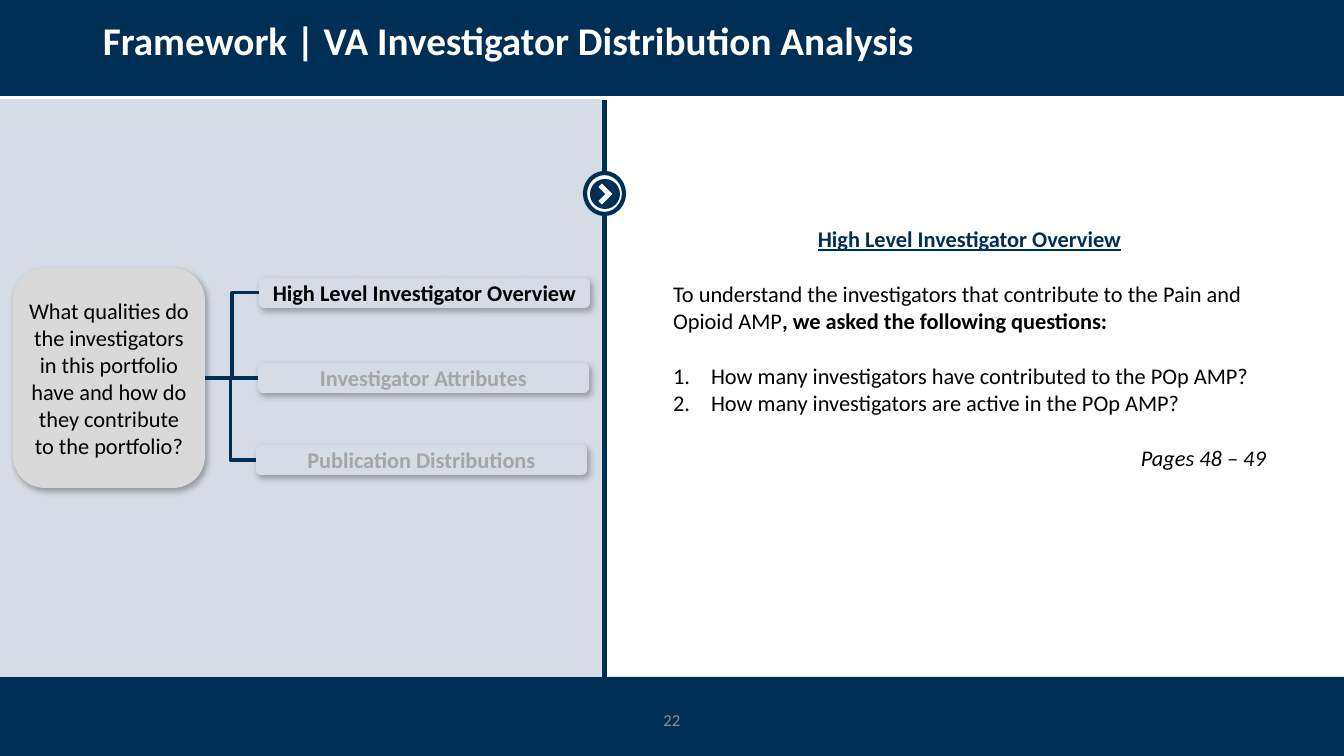
import lxml.etree
import pptx
import pptx.dml.color
import pptx.enum.shapes
import pptx.enum.text
import pptx.oxml.ns
import pptx.util

PX = 914400 / 100.8
NAVY, PALE, GREY, WHITE, BLACK = "002F56", "D6DCE5", "A5A5A5", "FFFFFF", "000000"
SHAPE = pptx.enum.shapes.MSO_SHAPE
CONNECTOR = pptx.enum.shapes.MSO_CONNECTOR
ALIGN = pptx.enum.text.PP_ALIGN
MIDDLE = pptx.enum.text.MSO_ANCHOR.MIDDLE
qn = pptx.oxml.ns.qn


def px(*lengths):
    return [round(length * PX) for length in lengths]


def color(value):
    return pptx.dml.color.RGBColor.from_string(value)


deck = pptx.Presentation()
deck.slide_width, deck.slide_height = px(1344, 756)
page = deck.slides.add_slide(deck.slide_layouts[6])
shapes = page.shapes

# Bands, left panel, divider and the badge on it
for kind, area, fill in [
    (SHAPE.RECTANGLE, (0, 677, 1344, 79), NAVY),
    (SHAPE.RECTANGLE, (0, 0, 1344, 96), NAVY),
    (SHAPE.RECTANGLE, (0, 99, 601, 578), PALE),
    (SHAPE.RECTANGLE, (602, 100, 5, 577), NAVY),
    (SHAPE.OVAL, (585, 173, 39, 41), WHITE),
    (SHAPE.OVAL, (590, 179, 30, 30), NAVY),
]:
    block = shapes.add_shape(kind, *px(*area))
    block.shadow.inherit = False
    block.fill.solid()
    block.fill.fore_color.rgb = color(fill)
    if fill == WHITE:
        block.line.color.rgb = color(NAVY)
        block.line.width = pptx.util.Pt(3)
    else:
        block.line.fill.background()

builder = shapes.build_freeform(602, 184, scale=PX)
builder.add_line_segments([(599, 187), (606, 194), (599, 201), (602, 204), (612, 194)])
chevron = builder.convert_to_shape()
chevron.shadow.inherit = False
chevron.fill.solid()
chevron.fill.fore_color.rgb = color(WHITE)
chevron.line.color.rgb = color(WHITE)
chevron.line.width = pptx.util.Pt(0.5)

# Title and page number
for text, area, align, size, ink, bold in [
    ("Framework | VA Investigator Distribution Analysis", (93, 5, 1159, 75), ALIGN.LEFT, 28, WHITE, True),
    ("22", (521, 701, 302, 40), ALIGN.CENTER, 12, "8C8C8C", False),
]:
    box = shapes.add_textbox(*px(*area))
    box.text_frame.word_wrap = True
    box.text_frame.vertical_anchor = MIDDLE
    box.text_frame.text = text
    para = box.text_frame.paragraphs[0]
    para.alignment = align
    para.line_spacing = 0.9
    para.font.name = "Calibri"
    para.font.size = pptx.util.Pt(size)
    para.font.bold = bold
    para.font.color.rgb = color(ink)

# Question and the three topics it leads to
cards = []
for text, area, fill, ink, inset in [
    ("What qualities do the investigators in this portfolio have and how do they contribute to the portfolio?",
     (13, 268, 192, 220), "D9D9D9", BLACK, 5),
    ("High Level Investigator Overview", (259, 278, 331, 30), PALE, BLACK, 0),
    ("Investigator Attributes", (258, 363, 331, 30), PALE, GREY, 0),
    ("Publication Distributions", (256, 445, 331, 30), PALE, GREY, 0),
]:
    card = shapes.add_shape(SHAPE.ROUNDED_RECTANGLE, *px(*area))
    card.fill.solid()
    card.fill.fore_color.rgb = color(fill)
    card.line.fill.background()
    card.shadow.inherit = False
    effects = card._element.spPr.find(qn("a:effectLst"))
    shadow = lxml.etree.SubElement(effects, qn("a:outerShdw"), blurRad="57150",
                                   dist="33020", dir="3180000", algn="ctr", rotWithShape="0")
    tint = lxml.etree.SubElement(shadow, qn("a:srgbClr"), val=BLACK)
    lxml.etree.SubElement(tint, qn("a:alpha"), val="30000")
    frame = card.text_frame
    frame.word_wrap = True
    frame.vertical_anchor = MIDDLE
    frame.margin_left = frame.margin_right = frame.margin_top = frame.margin_bottom = px(inset)[0]
    frame.text = text
    para = frame.paragraphs[0]
    para.alignment = ALIGN.CENTER
    para.font.name = "Calibri"
    para.font.size = pptx.util.Pt(16)
    para.font.bold = bool(cards)
    para.font.color.rgb = color(ink)
    cards.append(card)

question, overview, attributes, publications = cards
for topic, kind in [
    (overview, CONNECTOR.ELBOW),
    (attributes, CONNECTOR.STRAIGHT),
    (publications, CONNECTOR.ELBOW),
]:
    branch = shapes.add_connector(kind, question.left + question.width, question.top + question.height // 2,
                                  topic.left, topic.top + topic.height // 2)
    branch.begin_connect(question, 3)
    branch.end_connect(topic, 1)
    branch.line.color.rgb = color(NAVY)
    branch.line.width = pptx.util.Pt(2.25)
    lxml.etree.SubElement(branch._element.spPr, qn("a:effectLst"))

# Overview text in a one-cell table
table = shapes.add_table(1, 1, *px(663, 221, 613, 280)).table
table.first_row = table.horz_banding = False
cell = table.cell(0, 0)
cell.fill.background()
GAP = 19.5
paragraphs = [
    (["High Level Investigator Overview"], ALIGN.CENTER, 0),
    (["To understand the investigators that contribute to the Pain and Opioid AMP",
      ", we asked the following questions:"], ALIGN.LEFT, GAP),
    (["How many investigators have contributed to the POp AMP?"], ALIGN.LEFT, GAP),
    (["How many investigators are active in the POp AMP?"], ALIGN.LEFT, 0),
    (["Pages 48 – 49"], ALIGN.RIGHT, GAP),
]
for index, (texts, align, gap) in enumerate(paragraphs):
    para = cell.text_frame.paragraphs[0] if index == 0 else cell.text_frame.add_paragraph()
    para.alignment = align
    para.space_before = pptx.util.Pt(gap)
    if texts[0].startswith("How many"):
        properties = para._p.get_or_add_pPr()
        indent = px(38)[0]
        properties.set("marL", str(indent))
        properties.set("indent", str(-indent))
        lxml.etree.SubElement(properties, qn("a:buFont"), typeface="+mj-lt")
        lxml.etree.SubElement(properties, qn("a:buAutoNum"), type="arabicPeriod")
    for position, text in enumerate(texts):
        span = para.add_run()
        span.text = text
        span.font.name = "Calibri"
        span.font.size = pptx.util.Pt(16)
        span.font.bold = index == 0 or position == 1
        span.font.underline = index == 0
        span.font.italic = align == ALIGN.RIGHT
        span.font.color.rgb = color(NAVY if index == 0 else BLACK)

deck.save("out.pptx")
